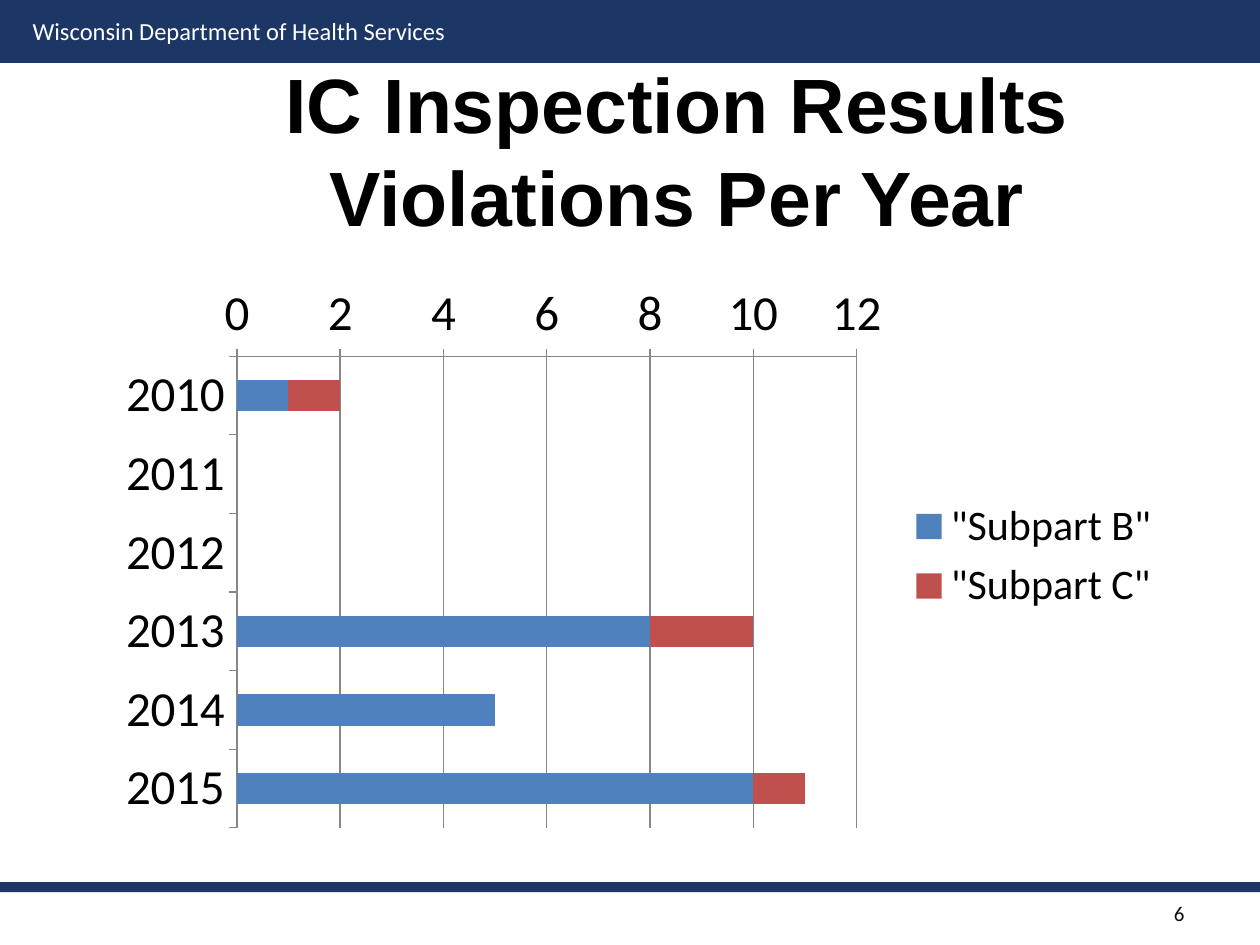
from pptx import Presentation
from pptx.chart.data import CategoryChartData
from pptx.dml.color import RGBColor
from pptx.enum.chart import XL_CHART_TYPE as CT, XL_LEGEND_POSITION as LP, XL_TICK_MARK as TM
from pptx.enum.shapes import MSO_SHAPE as MS
from pptx.enum.text import MSO_ANCHOR as MA, PP_ALIGN as PA
from pptx.util import Inches, Pt

W, H = 10, 7.5
NAVY, GRID = "1C3665", "878787"
BANDS = [(0, 0, W, 0.5), (0, 7, W, 0.08)]
TEXTS = [
    ("Wisconsin Department of Health Services", (0.16, 0.08, 3.51, 0.57),
     14, "Calibri", "FFFFFF", False, PA.LEFT, MA.TOP),
    ("IC Inspection Results\vViolations Per Year", (1.25, 0.62, 8.25, 1.13),
     44, "Arial", "000000", True, PA.CENTER, MA.MIDDLE),
    ("6", (8.92, 7.08, 0.58, 0.34),
     12, "Calibri", "0D0D0D", False, PA.RIGHT, MA.MIDDLE),
]
YEARS = ["2010", "2011", "2012", "2013", "2014", "2015"]
SERIES = [
    ('"Subpart B"', "4F81BD", [1, None, None, 8, 5, 10]),
    ('"Subpart C"', "C0504D", [1, None, None, 2, 0, 1]),
]
CHART_BOX = (0.83, 2.17, 8.5, 4.49)


def rgb(value):
    return RGBColor.from_string(value)


def inches(box):
    return [Inches(v) for v in box]


def set_font(font, size, name="Calibri", color="000000", bold=False):
    font.size, font.name, font.bold = Pt(size), name, bold
    font.color.rgb = rgb(color)


def add_band(slide, box):
    sp = slide.shapes.add_shape(MS.RECTANGLE, *inches(box))
    sp.shadow.inherit = False
    sp.fill.solid()
    sp.fill.fore_color.rgb = rgb(NAVY)
    sp.line.fill.background()


def add_text(slide, text, box, size, name, color, bold, align, anchor):
    tf = slide.shapes.add_textbox(*inches(box)).text_frame
    tf.word_wrap = True
    tf.vertical_anchor = anchor
    tf.text = text
    p = tf.paragraphs[0]
    p.alignment = align
    for r in p.runs:
        set_font(r.font, size, name, color, bold)


def add_violations_chart(slide):
    data = CategoryChartData()
    data.categories = YEARS
    for name, _, values in SERIES:
        data.add_series(name, values)
    chart = slide.shapes.add_chart(CT.BAR_STACKED, *inches(CHART_BOX), data).chart
    set_font(chart.font, 10)
    chart.has_title = False
    chart.has_legend = True
    chart.legend.position = LP.RIGHT
    chart.legend.include_in_layout = False
    set_font(chart.legend.font, 24)

    plot = chart.plots[0]
    plot.gap_width, plot.overlap = 150, 100
    plot.vary_by_categories = False
    for series, (_, color, _) in zip(plot.series, SERIES):
        series.invert_if_negative = False
        series.format.fill.solid()
        series.format.fill.fore_color.rgb = rgb(color)

    years, counts = chart.category_axis, chart.value_axis
    years.reverse_order = True
    years.has_major_gridlines = False
    counts.has_major_gridlines = True
    counts.minimum_scale, counts.maximum_scale, counts.major_unit = 0, 12, 2
    for axis in (years, counts):
        axis.major_tick_mark, axis.minor_tick_mark = TM.OUTSIDE, TM.NONE
        set_font(axis.tick_labels.font, 28)
    for part in (years, counts, counts.major_gridlines):
        part.format.line.color.rgb = rgb(GRID)
        part.format.line.width = Pt(0.75)


def main():
    prs = Presentation()
    prs.slide_width, prs.slide_height = Inches(W), Inches(H)
    slide = prs.slides.add_slide(prs.slide_layouts[6])
    for box in BANDS:
        add_band(slide, box)
    for item in TEXTS:
        add_text(slide, *item)
    add_violations_chart(slide)
    prs.save("out.pptx")


if __name__ == "__main__":
    main()
